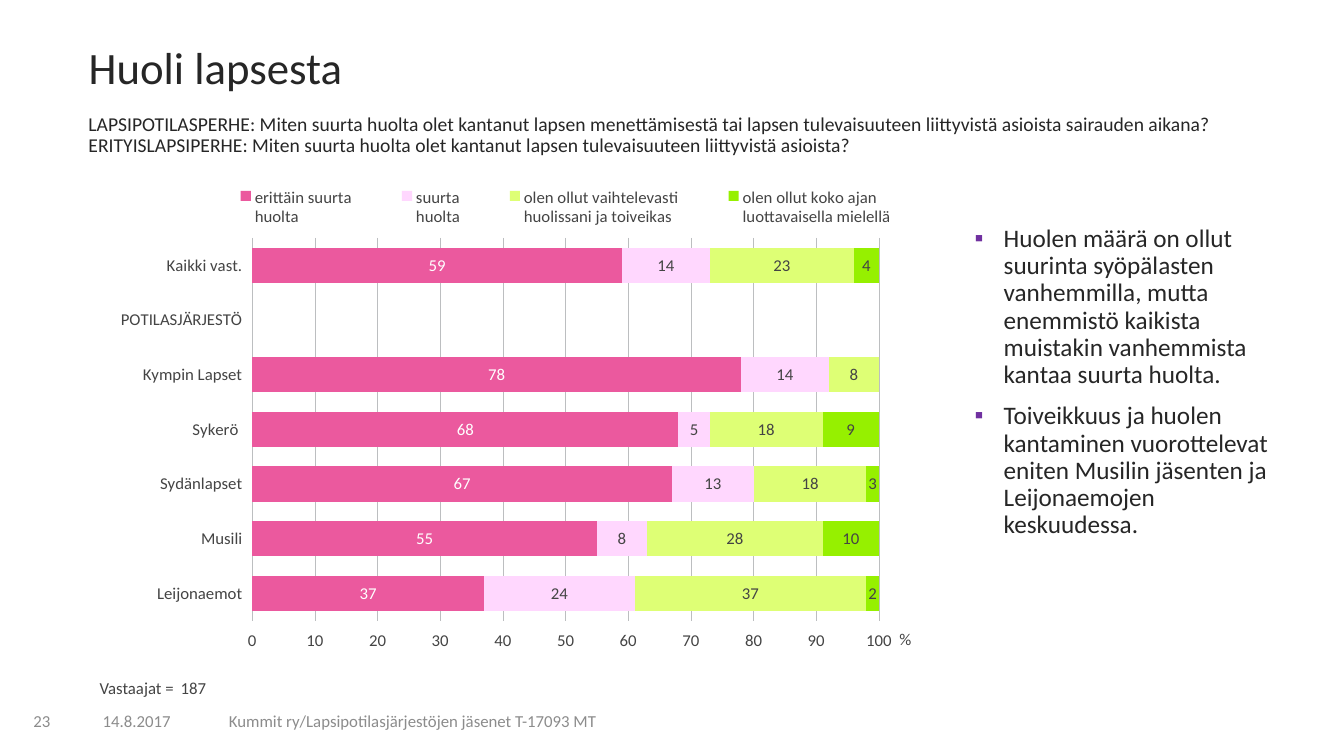
from lxml.etree import SubElement as Sub
from pptx import Presentation
from pptx.chart.data import CategoryChartData as Data
from pptx.dml.color import RGBColor
from pptx.enum.chart import XL_CHART_TYPE as Kind
from pptx.enum.chart import XL_LABEL_POSITION as Spot
from pptx.enum.chart import XL_LEGEND_POSITION as Side
from pptx.enum.chart import XL_TICK_LABEL_POSITION as Place
from pptx.enum.chart import XL_TICK_MARK as Tick
from pptx.enum.text import MSO_ANCHOR as Anchor
from pptx.enum.text import MSO_AUTO_SIZE as Fit
from pptx.enum.text import PP_ALIGN as Align
from pptx.oxml.ns import qn
from pptx.util import Cm, Pt

FONT = "Calibri"
WHITE = RGBColor(0xFF, 0xFF, 0xFF)
INK = RGBColor(0x26, 0x26, 0x26)
GREY = RGBColor(0x44, 0x44, 0x44)
PALE = RGBColor(0x8C, 0x8C, 0x8C)
GRID = RGBColor(0xBC, 0xBE, 0xC0)
PINK = RGBColor(0xEB, 0x59, 0x9E)
ROSE = RGBColor(0xFF, 0xD7, 0xFE)
LIME = RGBColor(0xDE, 0xFF, 0x75)
GREEN = RGBColor(0x96, 0xF0, 0x00)
PURPLE = RGBColor(0x70, 0x30, 0xA0)

GROUPS = ["Kaikki vast.", "POTILASJÄRJESTÖ", "Kympin Lapset", "Sykerö ",
          "Sydänlapset", "Musili", "Leijonaemot"]
SERIES = [
    ("erittäin suurta \nhuolta", [59, None, 78, 68, 67, 55, 37], PINK, WHITE),
    ("suurta \nhuolta", [14, None, 14, 5, 13, 8, 24], ROSE, GREY),
    ("olen ollut vaihtelevasti \nhuolissani ja toiveikas",
     [23, None, 8, 18, 18, 28, 37], LIME, GREY),
    ("olen ollut koko ajan \nluottavaisella mielellä",
     [4, None, None, 9, 3, 10, 2], GREEN, GREY),
]
ASKS = ["LAPSIPOTILASPERHE: Miten suurta huolta olet kantanut lapsen menettämisestä "
        "tai lapsen tulevaisuuteen liittyvistä asioista sairauden aikana?",
        "ERITYISLAPSIPERHE: Miten suurta huolta olet kantanut lapsen "
        "tulevaisuuteen liittyvistä asioista?"]
POINTS = ["Huolen määrä on ollut suurinta syöpälasten vanhemmilla, mutta enemmistö "
          "kaikista muistakin vanhemmista kantaa suurta huolta.",
          "Toiveikkuus ja huolen kantaminen vuorottelevat eniten Musilin jäsenten "
          "ja Leijonaemojen keskuudessa."]


def style(font, size, color):
    font.name, font.size, font.bold = FONT, Pt(size), False
    font.color.rgb = color


def write(shape, lines, size, color, space=0.9, anchor=Anchor.TOP):
    frame = shape.text_frame
    frame.text = "\n".join(lines)
    frame.word_wrap = True
    frame.auto_size = Fit.NONE
    frame.vertical_anchor = anchor
    for para in frame.paragraphs:
        para.alignment = Align.LEFT
        para.line_spacing = space
        para.space_before = Pt(0)
        for run in para.runs:
            style(run.font, size, color)
    return frame.paragraphs


def move(shape, box):
    shape.left, shape.top, shape.width, shape.height = map(Cm, box)


def label(slide, box, lines, size, color, **extra):
    shape = slide.shapes.add_textbox(*map(Cm, box))
    write(shape, lines, size, color, **extra)


def header(slide, box):
    left, top, width, height = box
    half = height / 2
    move(slide.shapes.title, (left, top, width, half))
    write(slide.shapes.title, ["Huoli lapsesta"], 32, INK)
    label(slide, (left, top + half, width, half), ASKS, 14, INK)


def bullets(slide, box):
    body = slide.placeholders[1]
    move(body, box)
    paras = write(body, POINTS, 18, INK)
    for para in paras:
        props = para._p.get_or_add_pPr()
        props.set("marL", str(Cm(0.73)))
        props.set("indent", str(-Cm(0.73)))
        tint = Sub(props, qn("a:buClr"))
        Sub(tint, qn("a:srgbClr")).set("val", str(PURPLE))
        Sub(props, qn("a:buChar")).set("char", "▪")
    for para in paras[1:]:
        para.space_before = Pt(10)


def pin(node, index, **spots):
    old = node.find(qn("c:layout"))
    if old is not None:
        node.remove(old)
    outer = Sub(node, qn("c:layout"))
    node.insert(index, outer)
    inner = Sub(outer, qn("c:manualLayout"))
    for key, value in spots.items():
        Sub(inner, qn("c:" + key)).set("val", str(value))


def bars(slide, box):
    data = Data(number_format="#,##0")
    data.categories = GROUPS
    for name, values, *_ in SERIES:
        data.add_series(name, values)
    chart = slide.shapes.add_chart(Kind.BAR_STACKED, *map(Cm, box), data).chart
    style(chart.font, 12, GREY)
    chart.has_title = False
    plot = chart.plots[0]
    plot.gap_width, plot.overlap, plot.vary_by_categories = 55, 100, False
    for series, (*_, fill, ink) in zip(plot.series, SERIES):
        series.format.fill.solid()
        series.format.fill.fore_color.rgb = fill
        marks = series.data_labels
        marks.show_value = True
        marks.position = Spot.CENTER
        marks.number_format, marks.number_format_is_linked = "#,##0", False
        style(marks.font, 12, ink)

    rows, scale = chart.category_axis, chart.value_axis
    for axis, side in ((rows, Place.LOW), (scale, Place.HIGH)):
        axis.major_tick_mark = axis.minor_tick_mark = Tick.NONE
        axis.tick_label_position = side
        axis.format.line.fill.background()
        style(axis.tick_labels.font, 12, GREY)
    rows.reverse_order = True
    scale.minimum_scale, scale.maximum_scale, scale.major_unit = 0, 100.01, 10
    scale.tick_labels.number_format = "General"
    scale.tick_labels.number_format_is_linked = False
    line = scale.major_gridlines.format.line
    line.color.rgb, line.width = GRID, Pt(0.5)
    frame = scale.axis_title.text_frame
    frame.text = "%"
    style(frame.paragraphs[0].runs[0].font, 12, GREY)

    chart.has_legend = True
    chart.legend.position = Side.TOP
    chart.legend.include_in_layout = False
    style(chart.legend.font, 12, GREY)
    area = chart.element.find(".//" + qn("c:plotArea"))
    pin(area, 0, layoutTarget="inner", xMode="edge", yMode="edge",
        x=0.21, y=0.13, w=0.72, h=0.81)
    pin(area.find(".//" + qn("c:title")), 1,
        xMode="edge", yMode="edge", x=0.95, y=0.95)
    pin(chart.element.find(".//" + qn("c:legend")), 1,
        xMode="edge", yMode="edge", x=0.15, y=0.02, w=0.84, h=0.09)


def count(slide, box):
    left, top, width, height = box
    for shift, text in ((0, "Vastaajat ="), (2.04, "187")):
        label(slide, (left + shift, top, width, height), [text], 12, GREY)


def footer(slide, box):
    left, top, _, height = box
    for shift, width, text in (
            (0, 1.12, "23"), (1.75, 2.57, "14.8.2017"),
            (4.93, 11.58, "Kummit ry/Lapsipotilasjärjestöjen jäsenet T-17093 MT")):
        label(slide, (left + shift, top, width, height), [text], 12, PALE,
              space=1.0, anchor=Anchor.MIDDLE)


def main():
    deck = Presentation()
    deck.slide_width, deck.slide_height = Cm(33.87), Cm(19.05)
    slide = deck.slides.add_slide(deck.slide_layouts[1])
    header(slide, (1.98, 1.03, 30.66, 3.46))
    bars(slide, (1.75, 4.45, 21.94, 12.06))
    bullets(slide, (24.31, 5.56, 8.33, 9.42))
    count(slide, (2.26, 17.02, 4.62, 0.71))
    footer(slide, (0.59, 17.65, 16.51, 1.02))
    deck.save("out.pptx")


if __name__ == "__main__":
    main()
